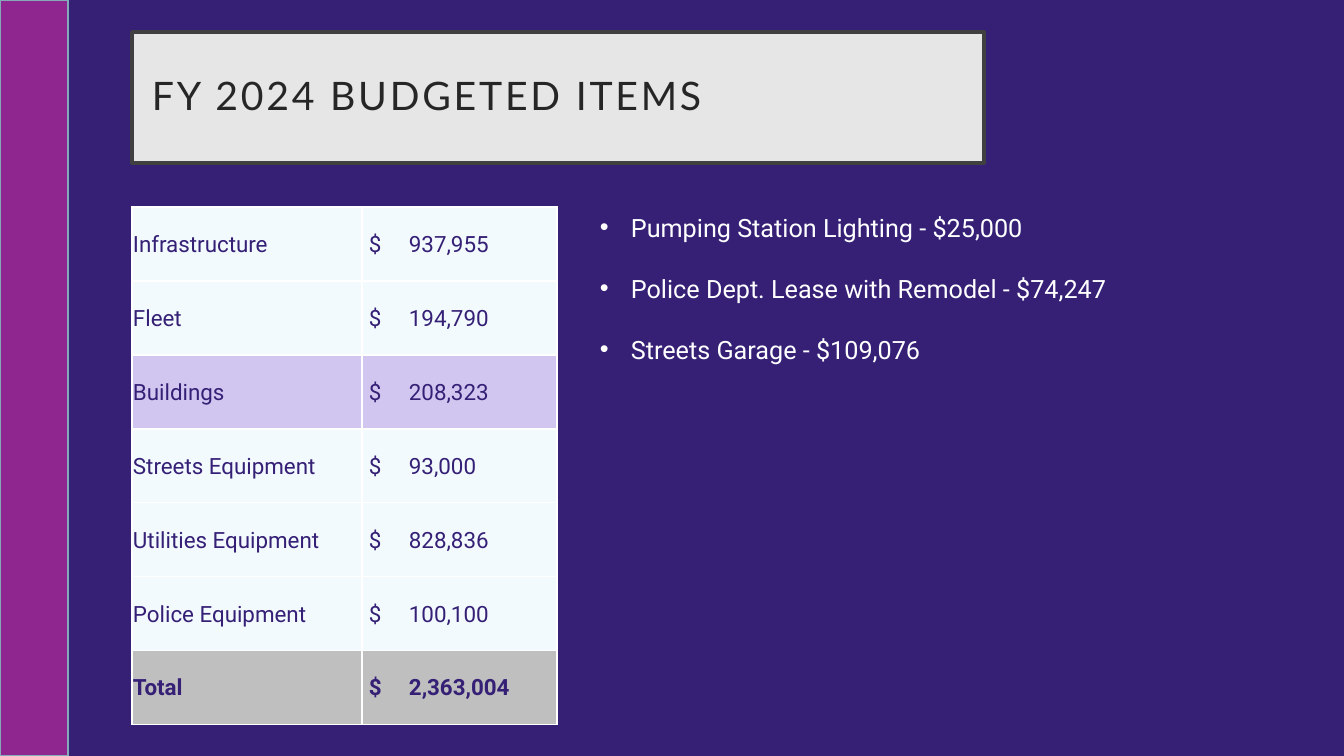
from typing import NamedTuple

import pptx
import pptx.dml.color
import pptx.enum.shapes
import pptx.enum.text
import pptx.oxml.ns
import pptx.util
from lxml import etree

RGBColor = pptx.dml.color.RGBColor
PURPLE = RGBColor(0x35, 0x20, 0x76)
MAGENTA = RGBColor(0x8F, 0x26, 0x8F)
STEEL = RGBColor(0x84, 0xA9, 0xB9)
PALE_GREY = RGBColor(0xE7, 0xE6, 0xE6)
DARK_GREY = RGBColor(0x40, 0x40, 0x40)
INK = RGBColor(0x26, 0x26, 0x26)
WHITE = RGBColor(0xFF, 0xFF, 0xFF)
ICE = RGBColor(0xF2, 0xFA, 0xFE)
LILAC = RGBColor(0xD0, 0xC6, 0xF0)
GREY = RGBColor(0xBF, 0xBF, 0xBF)

EMU_PER_PX = 914400 / 100.8
MIDDLE = pptx.enum.text.MSO_ANCHOR.MIDDLE


class Box(NamedTuple):
    x: int
    y: int
    w: int
    h: int


class BudgetRow(NamedTuple):
    item: str
    amount: str
    fill: RGBColor = ICE
    bold: bool = False


BAR = Box(0, 0, 68, 756)
TITLE = Box(132, 32, 852, 131)
TABLE = Box(132, 207, 425, 518)
DETAILS = Box(590, 207, 622, 163)
COLUMN_WIDTHS = (230, 195)
AMOUNT_INDENT = 7
AMOUNT_TAB = 40
BULLET_INDENT = 31

BUDGET = (
    BudgetRow("Infrastructure", "937,955"),
    BudgetRow("Fleet", "194,790"),
    BudgetRow("Buildings", "208,323", LILAC),
    BudgetRow("Streets Equipment", "93,000"),
    BudgetRow("Utilities Equipment", "828,836"),
    BudgetRow("Police Equipment", "100,100"),
    BudgetRow("Total", "2,363,004", GREY, True),
)
BUILDING_DETAILS = (
    "Pumping Station Lighting - $25,000",
    "Police Dept. Lease with Remodel - $74,247",
    "Streets Garage - $109,076",
)


def px(n: int) -> pptx.util.Emu:
    return pptx.util.Emu(round(n * EMU_PER_PX))


def place(box: Box) -> list[pptx.util.Emu]:
    return [px(n) for n in box]


def add_child(parent, tag: str, **attributes: str):
    return etree.SubElement(parent, pptx.oxml.ns.qn(tag), attributes)


def format_runs(p, font: str, size: int, color: RGBColor, bold: bool = False) -> None:
    for r in p.runs:
        r.font.name = font
        r.font.size = pptx.util.Pt(size)
        r.font.color.rgb = color
        r.font.bold = bold


def add_rectangle(slide, box: Box, fill: RGBColor, line: RGBColor, width: float):
    sp = slide.shapes.add_shape(pptx.enum.shapes.MSO_SHAPE.RECTANGLE, *place(box))
    sp.shadow.inherit = False
    sp.fill.solid()
    sp.fill.fore_color.rgb = fill
    sp.line.color.rgb = line
    sp.line.width = pptx.util.Pt(width)
    return sp


def add_title(slide) -> None:
    sp = add_rectangle(slide, TITLE, PALE_GREY, DARK_GREY, 2.5)
    tf = sp.text_frame
    tf.word_wrap = True
    tf.vertical_anchor = MIDDLE
    tf.margin_left = tf.margin_right = tf.margin_top = tf.margin_bottom = px(20)
    tf.text = "FY 2024 BUDGETED ITEMS"
    p = tf.paragraphs[0]
    p.alignment = pptx.enum.text.PP_ALIGN.LEFT
    p.line_spacing = 0.9
    format_runs(p, "Lato", 28, INK)
    p.runs[0].font._element.set("spc", "200")


def set_borders(cell) -> None:
    """Draw a white 1 pt line on all sides; borders must precede the fill."""
    tc_pr = cell._tc.get_or_add_tcPr()
    for side in ("L", "R", "T", "B"):
        ln = add_child(tc_pr, f"a:ln{side}", w=str(pptx.util.Pt(1)))
        add_child(add_child(ln, "a:solidFill"), "a:srgbClr", val=str(WHITE))


def fill_cell(cell, text: str, row: BudgetRow) -> None:
    set_borders(cell)
    cell.fill.solid()
    cell.fill.fore_color.rgb = row.fill
    cell.vertical_anchor = MIDDLE
    cell.margin_left = cell.margin_right = cell.margin_top = px(1)
    cell.margin_bottom = 0
    p = cell.text_frame.paragraphs[0]
    p.text = text
    format_runs(p, "Roboto", 16, PURPLE, row.bold)


def add_budget_table(slide) -> None:
    table = slide.shapes.add_table(len(BUDGET), 2, *place(TABLE)).table
    table.first_row = table.horz_banding = False
    for column, width in zip(table.columns, COLUMN_WIDTHS):
        column.width = px(width)
    for i, row in enumerate(BUDGET):
        table.rows[i].height = px(TABLE.h // len(BUDGET))
        fill_cell(table.cell(i, 0), row.item, row)
        amount = table.cell(i, 1)
        fill_cell(amount, f"$\t{row.amount}", row)
        amount.margin_left = px(AMOUNT_INDENT)
        p_pr = amount.text_frame.paragraphs[0]._p.get_or_add_pPr()
        tabs = add_child(p_pr, "a:tabLst")
        add_child(tabs, "a:tab", pos=str(px(AMOUNT_TAB)), algn="l")


def add_building_details(slide) -> None:
    tf = slide.shapes.add_textbox(*place(DETAILS)).text_frame
    tf.word_wrap = True
    tf.text = "\n".join(BUILDING_DETAILS)
    for i, p in enumerate(tf.paragraphs):
        if i:
            p.space_before = pptx.util.Pt(22)
        p_pr = p._p.get_or_add_pPr()
        p_pr.set("marL", str(px(BULLET_INDENT)))
        p_pr.set("indent", str(-px(BULLET_INDENT)))
        add_child(p_pr, "a:buFont", typeface="Arial")
        add_child(p_pr, "a:buChar", char="•")
        format_runs(p, "Roboto", 18, WHITE)


def main() -> None:
    prs = pptx.Presentation()
    prs.slide_width, prs.slide_height = px(1344), px(756)
    slide = prs.slides.add_slide(prs.slide_layouts[6])
    slide.background.fill.solid()
    slide.background.fill.fore_color.rgb = PURPLE
    add_rectangle(slide, BAR, MAGENTA, STEEL, 1)
    add_title(slide)
    add_budget_table(slide)
    add_building_details(slide)
    prs.save("out.pptx")


if __name__ == "__main__":
    main()
